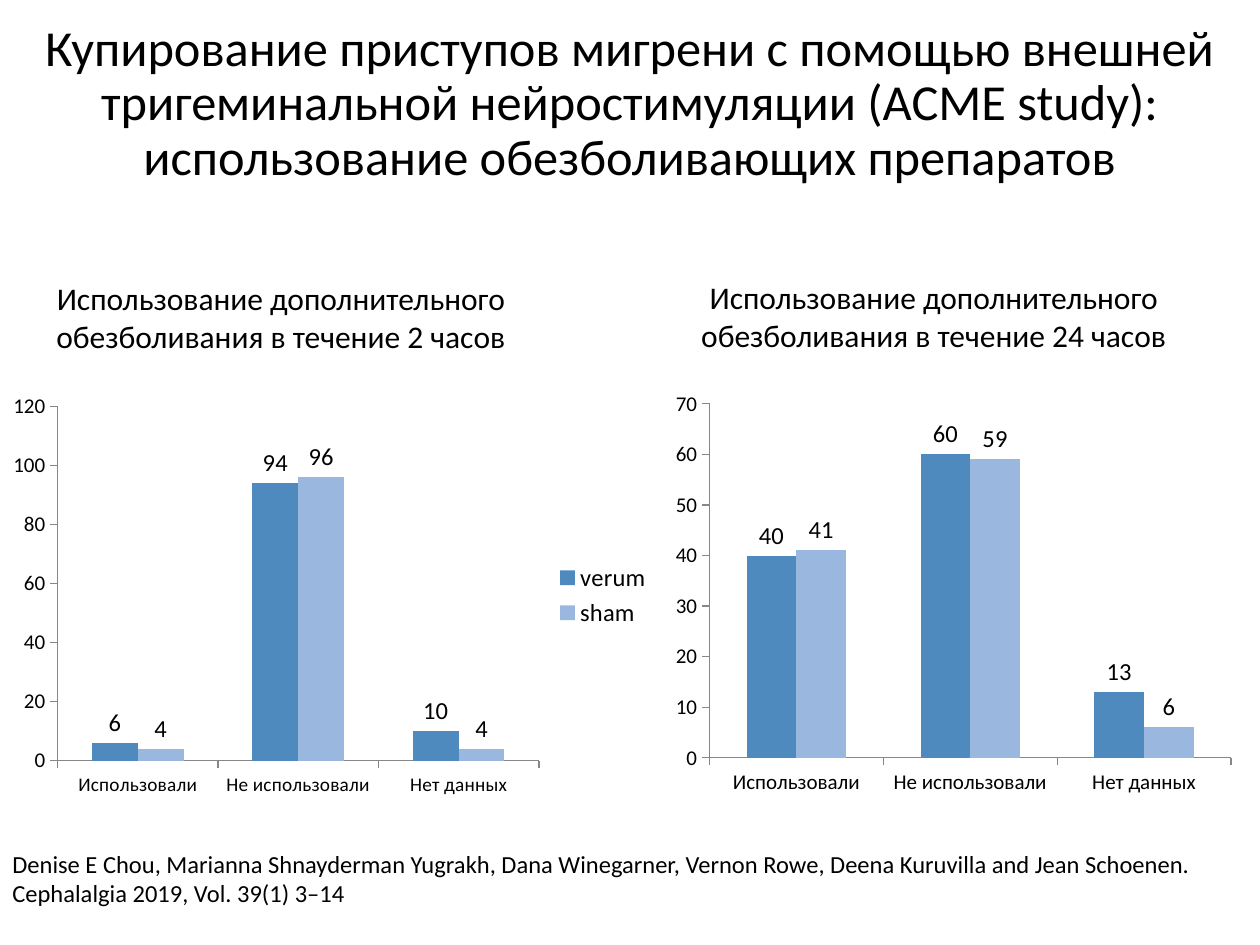
import dataclasses

import pptx
import pptx.chart.data
import pptx.dml.color
import pptx.enum.chart
import pptx.enum.text
import pptx.util
from pptx.util import Cm, Pt

FONT = "Calibri"
BLACK = "000000"
AXIS_GREY = "878787"
GROUP_COLOURS = {"verum": "4F8ABE", "sham": "9AB7DF"}
ANSWERS = ["Использовали", "Не использовали", "Нет данных"]


@dataclasses.dataclass
class Box:
    left: float
    top: float
    width: float
    height: float

    def lengths(self) -> tuple:
        return Cm(self.left), Cm(self.top), Cm(self.width), Cm(self.height)


@dataclasses.dataclass
class Panel:
    heading: str
    heading_box: Box
    chart_box: Box
    counts: dict
    axis_max: int
    axis_step: int
    answer_size: int
    has_legend: bool


PANELS = [
    Panel("Использование дополнительного обезболивания в течение 2 часов",
          Box(0, 5.51, 11.33, 1.8), Box(0, 7.77, 13.39, 8.46),
          {"verum": (6, 94, 10), "sham": (4, 96, 4)}, 120, 20, 11, True),
    Panel("Использование дополнительного обезболивания в течение 24 часов",
          Box(12.6, 5.48, 12.45, 1.8), Box(13.39, 7.72, 11.66, 8.48),
          {"verum": (40, 60, 13), "sham": (41, 59, 6)}, 70, 10, 12, False),
]


def rgb(colour: str) -> pptx.dml.color.RGBColor:
    return pptx.dml.color.RGBColor.from_string(colour)


def style_font(font, size: float) -> None:
    font.name = FONT
    font.size = Pt(size)
    font.color.rgb = rgb(BLACK)


def write(frame, text: str, size: float, alignment) -> None:
    frame.text = text
    frame.word_wrap = True
    paragraph = frame.paragraphs[0]
    paragraph.alignment = alignment
    style_font(paragraph.runs[0].font, size)


def add_text(slide, box: Box, text: str, size: float, alignment) -> None:
    write(slide.shapes.add_textbox(*box.lengths()).text_frame, text, size, alignment)


def style_axis(axis, size: int) -> None:
    axis.has_major_gridlines = False
    axis.major_tick_mark = pptx.enum.chart.XL_TICK_MARK.OUTSIDE
    axis.minor_tick_mark = pptx.enum.chart.XL_TICK_MARK.NONE
    axis.format.line.color.rgb = rgb(AXIS_GREY)
    style_font(axis.tick_labels.font, size)


def add_panel(slide, panel: Panel) -> None:
    add_text(slide, panel.heading_box, panel.heading, 18,
             pptx.enum.text.PP_ALIGN.CENTER)

    answers = pptx.chart.data.CategoryChartData()
    answers.categories = ANSWERS
    for group, values in panel.counts.items():
        answers.add_series(group, values)
    chart = slide.shapes.add_chart(
        pptx.enum.chart.XL_CHART_TYPE.COLUMN_CLUSTERED,
        *panel.chart_box.lengths(), answers).chart
    style_font(chart.font, 18)
    chart.has_title = False

    # Axes
    style_axis(chart.category_axis, panel.answer_size)
    style_axis(chart.value_axis, 12)
    chart.value_axis.minimum_scale = 0
    chart.value_axis.maximum_scale = panel.axis_max
    chart.value_axis.major_unit = panel.axis_step

    # Columns and their values
    plot = chart.plots[0]
    plot.gap_width = 150
    plot.overlap = 0
    plot.vary_by_categories = False
    for series in plot.series:
        series.format.fill.solid()
        series.format.fill.fore_color.rgb = rgb(GROUP_COLOURS[series.name])
        labels = series.data_labels
        labels.show_value = True
        labels.position = pptx.enum.chart.XL_LABEL_POSITION.OUTSIDE_END
        style_font(labels.font, 14)

    chart.has_legend = panel.has_legend
    if panel.has_legend:
        chart.legend.position = pptx.enum.chart.XL_LEGEND_POSITION.RIGHT
        chart.legend.include_in_layout = False
        style_font(chart.legend.font, 14)


def main() -> None:
    deck = pptx.Presentation()
    deck.slide_width, deck.slide_height = Cm(25.4), Cm(19.05)
    slide = deck.slides.add_slide(deck.slide_layouts[5])

    # Title
    title = slide.shapes.title
    title.left, title.top, title.width, title.height = Box(0, 0.25, 25.4, 3.71).lengths()
    write(title.text_frame,
          "Купирование приступов мигрени с помощью внешней тригеминальной "
          "нейростимуляции (ACME study): использование обезболивающих препаратов",
          28.8, pptx.enum.text.PP_ALIGN.CENTER)
    title.text_frame.vertical_anchor = pptx.enum.text.MSO_ANCHOR.MIDDLE
    title.text_frame.paragraphs[0].line_spacing = 0.9

    # Results after 2 and 24 hours
    for panel in PANELS:
        add_panel(slide, panel)

    # Reference
    add_text(slide, Box(0, 16.99, 25.4, 2.06),
             "Denise E Chou, Marianna Shnayderman Yugrakh, Dana Winegarner, Vernon Rowe, "
             "Deena Kuruvilla and Jean Schoenen. Cephalalgia 2019, Vol. 39(1) 3–14",
             14, pptx.enum.text.PP_ALIGN.LEFT)

    deck.save("out.pptx")


if __name__ == "__main__":
    main()
